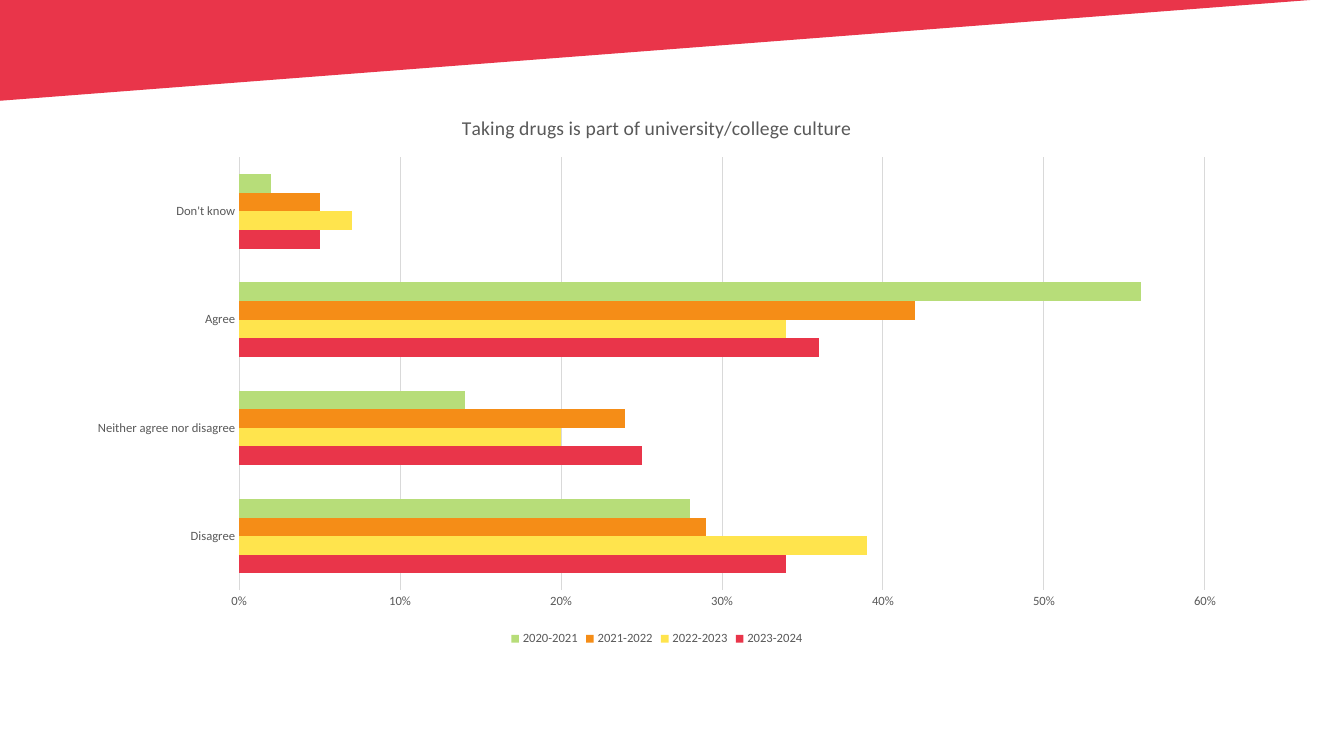
"""Build a slide with a clustered bar chart on attitudes to student drug use."""
from lxml import etree
from pptx import Presentation
from pptx import util as u
from pptx.chart.data import CategoryChartData
from pptx.dml.color import RGBColor
from pptx.enum import chart as ch

QUESTION = "Taking drugs is part of university/college culture"
ANSWERS = ["Disagree", "Neither agree nor disagree", "Agree", "Don't know"]
YEARS = {
    "2023-2024": (0.34, 0.25, 0.36, 0.05),
    "2022-2023": (0.39, 0.20, 0.34, 0.07),
    "2021-2022": (0.28 + 0.01, 0.24, 0.42, 0.05),
    "2020-2021": (0.28, 0.14, 0.56, 0.02),
}
YEARS["2021-2022"] = (0.29, 0.24, 0.42, 0.05)
BANNER = [(-0.01, 0), (0, 0.57), (13.35, 0.16), (13.33, 0)]
SURVEY_BOX = (0.74, 0.93, 11.55, 5.52)
THEME = {
    "font": "Calibri", "heading": 14, "label": 9,
    "ink": "595959", "rule": "D9D9D9", "banner": "E9354A",
    "years": ("E9354A", "FFE44D", "F58D17", "B7DD79"),
}


def colour(code):
    return RGBColor.from_string(code)


def set_font(font, size):
    styles = {"name": THEME["font"], "size": u.Pt(size), "bold": False}
    for key, value in styles.items():
        setattr(font, key, value)
    font.color.rgb = colour(THEME["ink"])


def draw_rule(line):
    line.color.rgb = colour(THEME["rule"])
    line.width = u.Pt(0.75)


def add_banner(slide):
    outline = slide.shapes.build_freeform(*BANNER[0], scale=u.Inches(1))
    outline.add_line_segments(BANNER[1:], close=True)
    banner = outline.convert_to_shape()
    banner.shadow.inherit = False
    banner.fill.solid()
    banner.fill.fore_color.rgb = colour(THEME["banner"])
    banner.line.fill.background()


def add_survey(slide):
    answers = CategoryChartData(number_format="0%")
    answers.categories = ANSWERS
    for year, shares in YEARS.items():
        answers.add_series(year, shares)
    box = [u.Inches(length) for length in SURVEY_BOX]
    survey = slide.shapes.add_chart(
        ch.XL_CHART_TYPE.BAR_CLUSTERED, *box, answers).chart
    set_font(survey.font, THEME["label"])

    survey.has_title = True
    survey.chart_title.include_in_layout = False
    heading = survey.chart_title.text_frame
    heading.text = QUESTION
    set_font(heading.paragraphs[0].runs[0].font, THEME["heading"])

    survey.has_legend = True
    survey.legend.position = ch.XL_LEGEND_POSITION.BOTTOM
    survey.legend.include_in_layout = False
    set_font(survey.legend.font, THEME["label"])

    for axis in (survey.category_axis, survey.value_axis):
        axis.major_tick_mark = axis.minor_tick_mark = ch.XL_TICK_MARK.NONE
        set_font(axis.tick_labels.font, THEME["label"])
    draw_rule(survey.category_axis.format.line)
    scale = survey.value_axis
    scale.format.line.fill.background()
    scale.has_major_gridlines = True
    draw_rule(scale.major_gridlines.format.line)
    scale.tick_labels.number_format = "0%"
    scale.tick_labels.number_format_is_linked = False

    bars = survey.plots[0]
    bars.gap_width = 182
    bars.vary_by_categories = False
    for year, code in zip(bars.series, THEME["years"]):
        year.invert_if_negative = False
        year.format.fill.solid()
        year.format.fill.fore_color.rgb = colour(code)


def main():
    deck = Presentation()
    deck.slide_width, deck.slide_height = u.Inches(13.33), u.Inches(7.5)
    slide = deck.slides.add_slide(deck.slide_layouts[6])
    add_banner(slide)
    add_survey(slide)
    deck.save("out.pptx")


if __name__ == "__main__":
    main()
